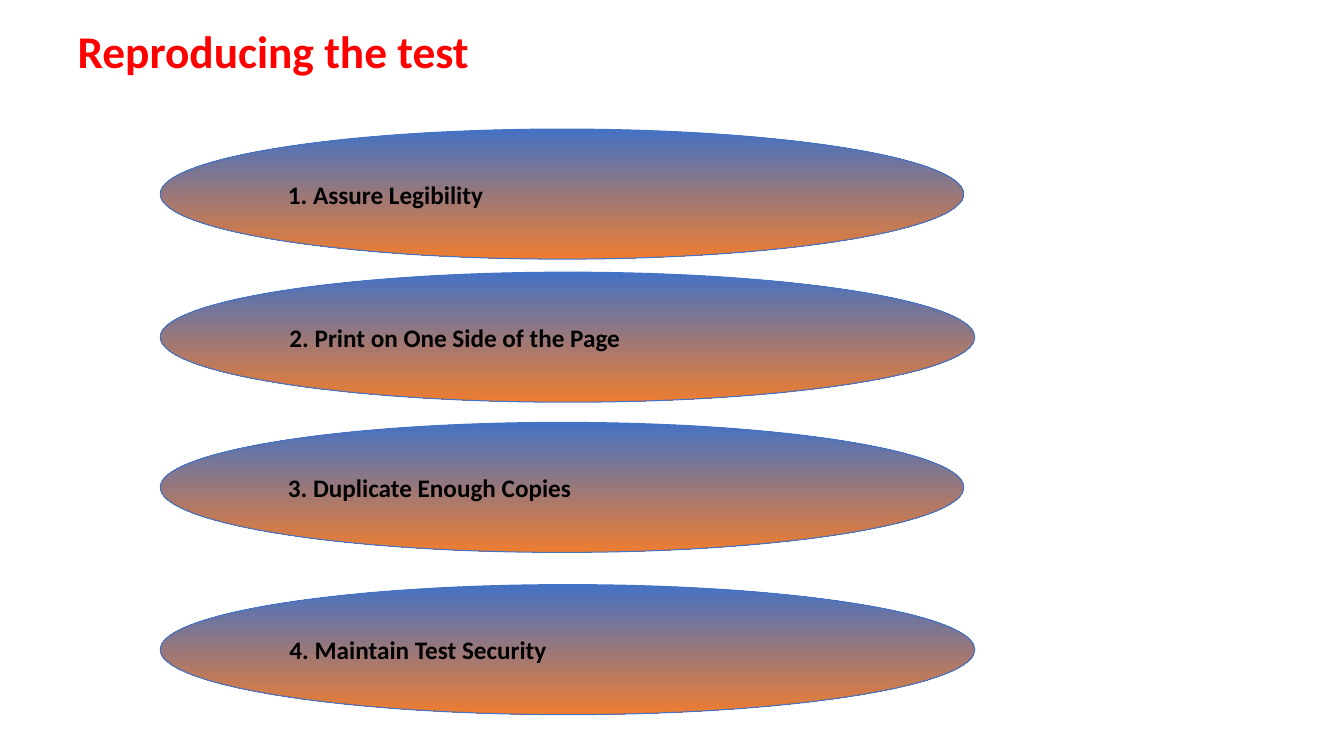
from dataclasses import dataclass

from pptx import Presentation
from pptx.dml.color import RGBColor
from pptx.enum.shapes import MSO_SHAPE
from pptx.enum.text import MSO_ANCHOR, PP_ALIGN
from pptx.shapes.autoshape import Shape
from pptx.slide import Slide
from pptx.util import Inches, Pt

PAGE_WIDTH = Inches(13.33)
PAGE_HEIGHT = Inches(7.5)
COLORS = {"title": "FF0000", "text": "000000", "top": "4472C4", "bottom": "ED7D31"}
FONT = {"name": "Calibri", "bold": True}
TITLE_FORMAT = {**FONT, "size": Pt(32.4)}
STEP_FORMAT = {**FONT, "size": Pt(18)}
STEP_LEFT = 11.93
STEP_HEIGHT = 17.2
NARROW = 59.78
WIDE = 60.6


@dataclass(frozen=True)
class Area:
    left: float
    top: float
    width: float
    height: float

    def lengths(self) -> tuple[int, int, int, int]:
        return (
            int(PAGE_WIDTH * self.left / 100),
            int(PAGE_HEIGHT * self.top / 100),
            int(PAGE_WIDTH * self.width / 100),
            int(PAGE_HEIGHT * self.height / 100),
        )


@dataclass(frozen=True)
class Step:
    text: str
    top: float
    width: float


STEPS = (
    Step("Assure Legibility", 17.07, NARROW),
    Step("Print on One Side of the Page", 36, WIDE),
    Step("Duplicate Enough Copies", 55.87, NARROW),
    Step("Maintain Test Security", 77.33, WIDE),
)


def write_text(box: Shape, text: str, font_format: dict, color: str, wrap: bool) -> None:
    frame = box.text_frame
    frame.word_wrap = wrap
    frame.vertical_anchor = MSO_ANCHOR.MIDDLE
    para = frame.paragraphs[0]
    para.alignment = PP_ALIGN.LEFT
    span = para.add_run()
    span.text = text
    for attribute, value in font_format.items():
        setattr(span.font, attribute, value)
    span.font.color.rgb = RGBColor.from_string(COLORS[color])


def draw_title(page: Slide, text: str) -> None:
    box = page.shapes.add_textbox(*Area(5.03, 2.8, 68.18, 8.53).lengths())
    write_text(box, text, TITLE_FORMAT, "title", True)
    box.text_frame.paragraphs[0].line_spacing = 0.9


def draw_step(page: Slide, number: int, step: Step) -> None:
    area = Area(STEP_LEFT, step.top, step.width, STEP_HEIGHT)
    ellipse = page.shapes.add_shape(MSO_SHAPE.OVAL, *area.lengths())
    ellipse.shadow.inherit = False
    ellipse.fill.gradient()
    ellipse.fill.gradient_angle = 270
    for stop, color in zip(ellipse.fill.gradient_stops, ("top", "bottom")):
        stop.color.rgb = RGBColor.from_string(COLORS[color])
    ellipse.line.color.rgb = RGBColor.from_string(COLORS["top"])
    ellipse.line.width = Pt(0.75)
    write_text(ellipse, f"{number}. {step.text}", STEP_FORMAT, "text", False)


def main() -> None:
    deck = Presentation()
    deck.slide_width = PAGE_WIDTH
    deck.slide_height = PAGE_HEIGHT
    page = deck.slides.add_slide(deck.slide_layouts[6])
    draw_title(page, "Reproducing the test")
    for number, step in enumerate(STEPS, start=1):
        draw_step(page, number, step)
    deck.save("out.pptx")


if __name__ == "__main__":
    main()
